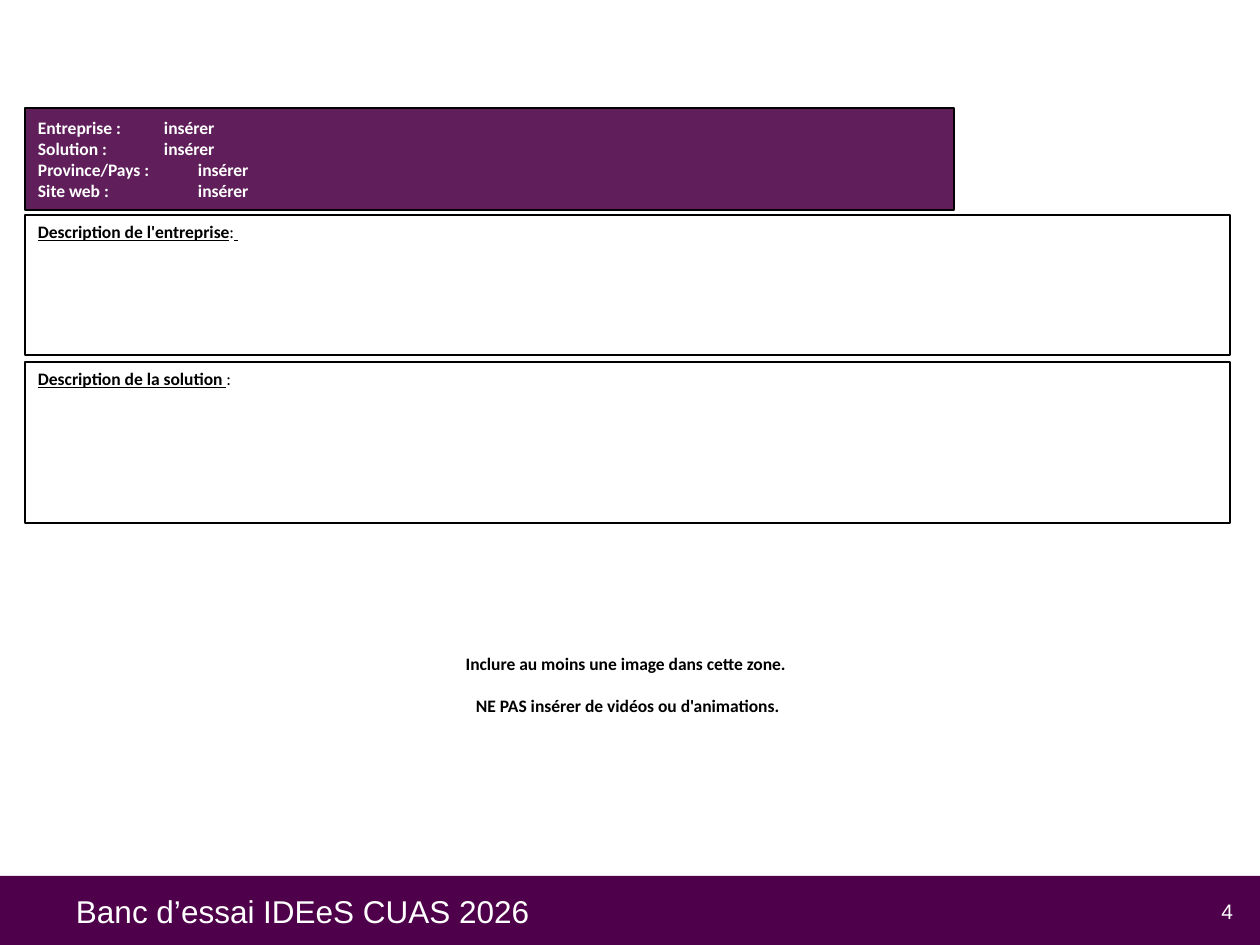
from pptx import Presentation
from pptx import util as u
from pptx.dml.color import RGBColor
from pptx.enum import shapes, text
from pptx.oxml.ns import qn
from lxml import etree

PX_PER_INCH = 126
LEFT, TOP, MIDDLE = text.PP_ALIGN.LEFT, text.MSO_ANCHOR.TOP, text.MSO_ANCHOR.MIDDLE
WHITE, BLACK, PURPLE, DARK = "FFFFFF", "000000", "601F5B", "4E004A"


def px(count):
    return u.Emu(round(count * 914400 / PX_PER_INCH))


def colour(value):
    return RGBColor.from_string(value)


def set_frame(shape, anchor, margins=(13, 6)):
    frame = shape.text_frame
    frame.word_wrap = True
    frame.auto_size = text.MSO_AUTO_SIZE.NONE
    frame.vertical_anchor = anchor
    frame.margin_left = frame.margin_right = px(margins[0])
    frame.margin_top = frame.margin_bottom = px(margins[1])
    return frame


def next_para(frame, index, align=LEFT):
    para = frame.add_paragraph() if index else frame.paragraphs[0]
    para.alignment = align
    return para


def add_span(para, words, size=10, font="Calibri", tint=BLACK, bold=True, underline=False):
    span = para.add_run()
    span.text = words
    span.font.size = u.Pt(size)
    span.font.name = font
    span.font.bold = bold
    span.font.underline = underline
    span.font.color.rgb = colour(tint)


def add_tab(para, position):
    tabs = etree.SubElement(para._p.get_or_add_pPr(), qn("a:tabLst"))
    etree.SubElement(tabs, qn("a:tab"), pos=str(px(position)), algn="l")


def add_rect(page, box, fill=None, line=None):
    rect = page.shapes.add_shape(shapes.MSO_SHAPE.RECTANGLE, *map(px, box))
    rect.shadow.inherit = False
    if fill:
        rect.fill.solid()
        rect.fill.fore_color.rgb = colour(fill)
    else:
        rect.fill.background()
    if line:
        rect.line.color.rgb = colour(line)
        rect.line.width = u.Pt(0.75)
    else:
        rect.line.fill.background()
    return rect


def add_footer(page, box, title_words, number):
    left, top, width, height = box
    band = add_rect(page, box, DARK)
    title = page.shapes.title
    title.element.addprevious(band.element)
    title.left, title.top = px(left + 63), px(top + 10)
    title.width, title.height = px(856), px(50)
    para = next_para(set_frame(title, MIDDLE), 0)
    add_span(para, title_words, 18, "Arial", WHITE, False)

    number_box = page.shapes.add_textbox(px(left + width - 297), px(top + 10), px(283), px(50))
    para = next_para(set_frame(number_box, MIDDLE), 0, text.PP_ALIGN.RIGHT)
    add_span(para, number, 12, "Arial", WHITE, False)


def add_identity(page, box, groups):
    frame = set_frame(add_rect(page, box, PURPLE, BLACK), MIDDLE)
    for index, (tab, lines) in enumerate(groups):
        para = next_para(frame, index)
        add_tab(para, tab)
        for row, words in enumerate(lines):
            if row:
                para.add_line_break()
            add_span(para, words, tint=WHITE)


def add_section(page, box, heading, tail=""):
    frame = set_frame(add_rect(page, box, line=BLACK), TOP)
    para = next_para(frame, 0)
    add_span(para, heading, underline=True)
    add_span(para, ":", bold=False)
    if tail:
        add_span(para, tail, bold=False, underline=True)


def add_instructions(page, box, lines):
    frame = set_frame(page.shapes.add_textbox(*map(px, box)), TOP, (0, 1))
    for index, words in enumerate(lines):
        para = next_para(frame, index, text.PP_ALIGN.CENTER)
        if index:
            para.space_before = u.Pt(12)
        add_span(para, words)


def main():
    deck = Presentation()
    deck.slide_width, deck.slide_height = px(1260), px(945)
    page = deck.slides.add_slide(deck.slide_layouts[5])

    add_footer(page, (0, 876, 1260, 69), "Banc d’essai IDEeS CUAS 2026", "4")
    add_instructions(page, (316, 652, 623, 66), [
        "Inclure au moins une image dans cette zone. ",
        "NE PAS insérer de vidéos ou d'animations.",
    ])
    add_section(page, (25, 215, 1205, 140), "Description de l'entreprise", " ")
    add_section(page, (25, 362, 1205, 161), "Description de la solution ")
    add_identity(page, (25, 108, 929, 102), [
        (126, ["Entreprise :\tinsérer", "Solution : \tinsérer"]),
        (160, ["Province/Pays : \tinsérer"]),
        (160, ["Site web :\tinsérer"]),
    ])
    deck.save("out.pptx")


if __name__ == "__main__":
    main()
